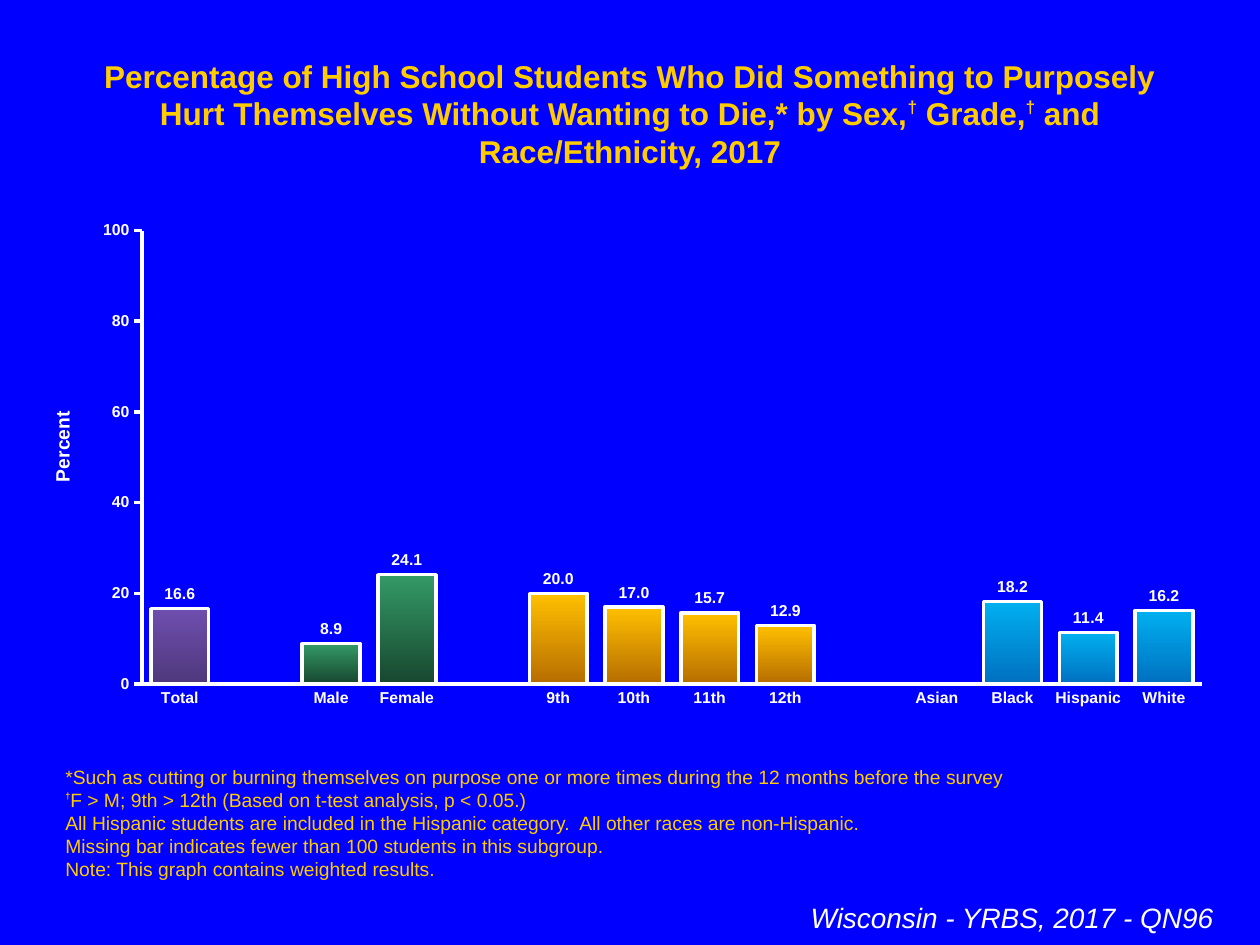
from dataclasses import dataclass
from typing import Any, Optional

from lxml import etree
from pptx import Presentation
from pptx.chart.data import CategoryChartData
from pptx.dml.color import RGBColor
from pptx.enum.chart import XL_CHART_TYPE, XL_LABEL_POSITION, XL_TICK_MARK
from pptx.enum.text import MSO_ANCHOR, MSO_AUTO_SIZE, PP_ALIGN
from pptx.oxml.ns import qn
from pptx.util import Inches, Pt

COLUMNS = XL_CHART_TYPE.COLUMN_CLUSTERED
ABOVE_BAR = XL_LABEL_POSITION.OUTSIDE_END
NO_TICK, TICK_OUT = XL_TICK_MARK.NONE, XL_TICK_MARK.OUTSIDE
TOP, BOTTOM = MSO_ANCHOR.TOP, MSO_ANCHOR.BOTTOM
LEFT, CENTER, RIGHT = PP_ALIGN.LEFT, PP_ALIGN.CENTER, PP_ALIGN.RIGHT
GROW = MSO_AUTO_SIZE.SHAPE_TO_FIT_TEXT

BLUE, GOLD, WHITE = "0000FF", "FFCC00", "FFFFFF"
PURPLE_BAR = ("6E4EAE", "4F387C")
GREEN_BAR = ("339966", "18472F")
AMBER_BAR = ("FFC000", "B66D00")
CYAN_BAR = ("00B0F0", "0070C0")


@dataclass
class Span:
    text: str
    size: float
    bold: bool = False
    italic: bool = False
    baseline: int = 0


@dataclass
class Block:
    box: tuple[float, float, float, float]
    color: str
    align: Any
    anchor: Any
    lines: list[list[Span]]


@dataclass
class Bar:
    label: str = ""
    percent: Optional[float] = None
    shades: Optional[tuple[str, str]] = None


def rgb(color: str) -> RGBColor:
    return RGBColor.from_string(color)


def apply(target: Any, formats: dict[str, Any]) -> None:
    for attribute, value in formats.items():
        setattr(target, attribute, value)


def style_font(font: Any, size: float, color: str, bold: bool = False, italic: bool = False) -> None:
    apply(font, {"name": "Arial", "size": Pt(size), "bold": bold, "italic": italic})
    font.color.rgb = rgb(color)


def style_line(line: Any) -> None:
    line.color.rgb = rgb(WHITE)
    line.width = Pt(2)


def add_block(slide: Any, block: Block) -> None:
    frame = slide.shapes.add_textbox(*map(Inches, block.box)).text_frame
    apply(frame, {"word_wrap": True, "auto_size": GROW, "vertical_anchor": block.anchor})
    for index, spans in enumerate(block.lines):
        paragraph = frame.add_paragraph() if index else frame.paragraphs[0]
        paragraph.alignment = block.align
        for span in spans:
            run = paragraph.add_run()
            run.text = span.text
            style_font(run.font, span.size, block.color, span.bold, span.italic)
            if span.baseline:
                run.font._element.set("baseline", str(span.baseline * 1000))


def make_layout(settings: dict[str, Any]) -> Any:
    layout = etree.Element(qn("c:layout"))
    manual = etree.SubElement(layout, qn("c:manualLayout"))
    for tag, value in settings.items():
        etree.SubElement(manual, qn(f"c:{tag}")).set("val", str(value))
    return layout


def place_plot(chart: Any) -> None:
    plot_area = chart._chartSpace.chart.plotArea
    for old in plot_area.findall(qn("c:layout")):
        plot_area.remove(old)
    plot_area.insert(0, make_layout({
        "layoutTarget": "inner", "xMode": "edge", "yMode": "edge",
        "x": 0.1, "y": 0.04, "w": 0.88, "h": 0.9}))


def style_axes(chart: Any) -> None:
    for axis, tick in ((chart.category_axis, NO_TICK), (chart.value_axis, TICK_OUT)):
        apply(axis, {"has_major_gridlines": False, "major_tick_mark": tick,
                     "minor_tick_mark": NO_TICK})
        style_line(axis.format.line)
        style_font(axis.tick_labels.font, 9, WHITE, bold=True)
    percent_axis = chart.value_axis
    apply(percent_axis, {"minimum_scale": 0, "maximum_scale": 100, "major_unit": 20})
    apply(percent_axis.tick_labels, {"number_format": "General", "number_format_is_linked": False})
    title = percent_axis.axis_title
    title.text_frame.text = "Percent"
    style_font(title.text_frame.paragraphs[0].runs[0].font, 11, WHITE, bold=True)
    title.text_frame._txBody.find(qn("a:bodyPr")).set("rot", "-5400000")
    for old in title._element.findall(qn("c:layout")):
        title._element.remove(old)
    title._element.find(qn("c:tx")).addnext(
        make_layout({"xMode": "edge", "yMode": "edge", "x": 0.02, "y": 0.39}))


def style_bars(chart: Any, bars: list[Bar]) -> None:
    plot = chart.plots[0]
    apply(plot, {"gap_width": 31, "overlap": 100, "vary_by_categories": False,
                 "has_data_labels": True})
    apply(plot.data_labels, {"show_value": True, "number_format": "#,##0.0",
                             "number_format_is_linked": False, "position": ABOVE_BAR})
    style_font(plot.data_labels.font, 9, WHITE, bold=True)
    series = plot.series[0]
    series.invert_if_negative = False
    series.format.fill.solid()
    series.format.fill.fore_color.rgb = rgb("26CA59")
    style_line(series.format.line)
    for index, bar in enumerate(bars):
        if bar.shades:
            look = series.points[index].format
            look.fill.gradient()
            look.fill.gradient_angle = 270
            for position, (stop, shade) in enumerate(zip(look.fill.gradient_stops, bar.shades)):
                stop.position = position
                stop.color.rgb = rgb(shade)
            style_line(look.line)


def add_bar_chart(slide: Any, bars: list[Bar]) -> None:
    data = CategoryChartData()
    data.categories = [bar.label for bar in bars]
    data.add_series("Series 1", [bar.percent for bar in bars])
    box = map(Inches, (0.17, 1.67, 9.56, 4))
    chart = slide.shapes.add_chart(COLUMNS, *box, data).chart
    apply(chart, {"has_legend": False, "has_title": False})
    style_font(chart.font, 18, WHITE)
    place_plot(chart)
    style_axes(chart)
    style_bars(chart, bars)


BARS = [
    Bar("Total", 16.6, PURPLE_BAR), Bar(),
    Bar("Male", 8.9, GREEN_BAR), Bar("Female", 24.1, GREEN_BAR), Bar(),
    Bar("9th", 20.0, AMBER_BAR), Bar("10th", 17.0, AMBER_BAR),
    Bar("11th", 15.7, AMBER_BAR), Bar("12th", 12.9, AMBER_BAR), Bar(),
    Bar("Asian", None, CYAN_BAR), Bar("Black", 18.2, CYAN_BAR),
    Bar("Hispanic", 11.4, CYAN_BAR), Bar("White", 16.2, CYAN_BAR),
]
TITLE_DAGGER = Span("†", 17, bold=True, baseline=40)
HEADING = Block((0.5, 0.4, 9, 0.4), GOLD, CENTER, TOP, [[
    Span("Percentage of High School Students Who Did Something to Purposely "
         "Hurt Themselves Without Wanting to Die,* by Sex,", 18, bold=True),
    TITLE_DAGGER,
    Span(" Grade,", 18, bold=True),
    TITLE_DAGGER,
    Span(" and Race/Ethnicity, 2017", 18, bold=True),
]])
FOOTNOTES = Block((0.42, 6.75, 9.17, 0.29), GOLD, LEFT, BOTTOM, [
    [Span("*Such as cutting or burning themselves on purpose one or more times "
          "during the 12 months before the survey", 11)],
    [Span("†", 9, bold=True, baseline=50),
     Span("F > M; 9th > 12th (Based on t-test analysis, p < 0.05.)", 11)],
    [Span("All Hispanic students are included in the Hispanic category.  "
          "All other races are non-Hispanic.", 11)],
    [Span("Missing bar indicates fewer than 100 students in this subgroup.", 11)],
    [Span("Note: This graph contains weighted results.", 11)],
])
SURVEY = Block((0.33, 7.1, 9.4, 0.37), WHITE, RIGHT, TOP,
               [[Span("Wisconsin - YRBS, 2017 - QN96", 16, italic=True)]])


def main() -> None:
    deck = Presentation()
    apply(deck, {"slide_width": Inches(10), "slide_height": Inches(7.5)})
    slide = deck.slides.add_slide(deck.slide_layouts[6])
    slide.background.fill.solid()
    slide.background.fill.fore_color.rgb = rgb(BLUE)
    for block in (HEADING, FOOTNOTES, SURVEY):
        add_block(slide, block)
    add_bar_chart(slide, BARS)
    deck.save("out.pptx")


if __name__ == "__main__":
    main()
